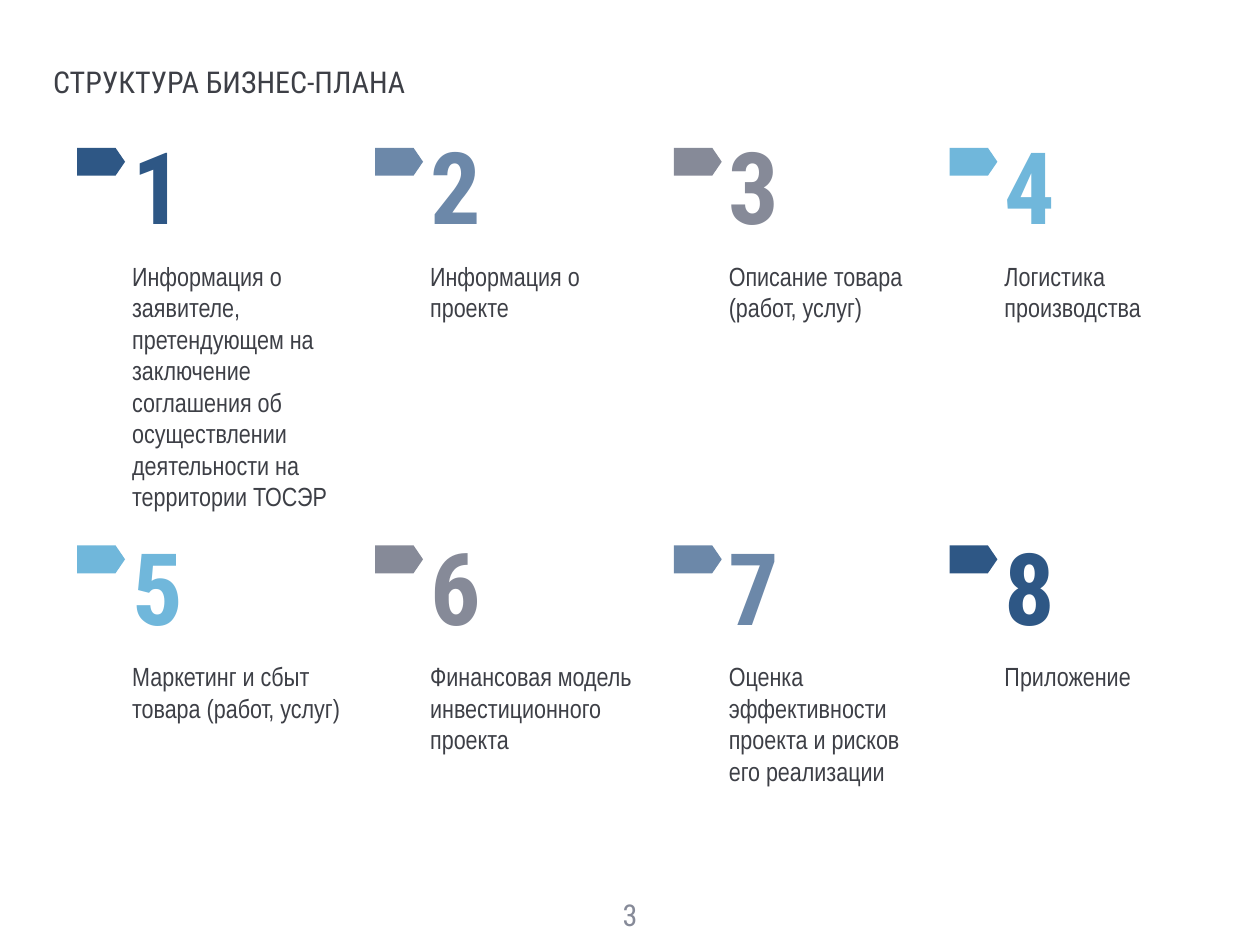
from dataclasses import dataclass

from pptx import Presentation
from pptx.dml.color import RGBColor
from pptx.enum.shapes import MSO_SHAPE
from pptx.enum.text import MSO_ANCHOR, PP_ALIGN
from pptx.util import Cm, Pt

TAG = MSO_SHAPE.FLOWCHART_OFFPAGE_CONNECTOR
TOP, MIDDLE = MSO_ANCHOR.TOP, MSO_ANCHOR.MIDDLE
LEFT, CENTER = PP_ALIGN.LEFT, PP_ALIGN.CENTER


@dataclass(frozen=True)
class Theme:
    ink: str = "3D3F46"
    navy: str = "2E5785"
    steel: str = "6C88A9"
    gray: str = "868A98"
    sky: str = "70B7DB"
    head: str = "Roboto Condensed"
    body: str = "Arial Narrow"
    title: int = 24
    digit: int = 80
    label: int = 21


@dataclass(frozen=True)
class Style:
    font: str
    size: int
    color: str
    bold: bool = False
    align: PP_ALIGN = LEFT
    anchor: MSO_ANCHOR = TOP
    wrap: bool = True


@dataclass(frozen=True)
class Row:
    digit: float
    label: float
    tag: float


@dataclass(frozen=True)
class Item:
    label: str
    color: str
    lines: int
    width: float = 6.22


THEME = Theme()
COLS = (3.73, 12.14, 20.57, 28.35)
ROWS = (Row(3.51, 7.34, 3.89), Row(14.83, 18.64, 15.11))
LINE = 0.89
ITEMS = (
    Item("Информация о заявителе, претендующем на заключение соглашения "
         "об осуществлении деятельности на территории ТОСЭР", THEME.navy, 8),
    Item("Информация о проекте", THEME.steel, 2),
    Item("Описание товара (работ, услуг)", THEME.gray, 2),
    Item("Логистика производства", THEME.sky, 2, 6.02),
    Item("Маркетинг и сбыт товара (работ, услуг)", THEME.sky, 2, 6.02),
    Item("Финансовая модель инвестиционного проекта", THEME.gray, 3),
    Item("Оценка эффективности проекта и рисков его реализации",
         THEME.steel, 4, 5.59),
    Item("Приложение", THEME.navy, 1),
)


def add_text(slide, text: str, x: float, y: float, w: float, h: float,
             style: Style) -> None:
    frame = slide.shapes.add_textbox(Cm(x), Cm(y), Cm(w), Cm(h)).text_frame
    frame.margin_left = frame.margin_right = Cm(0)
    frame.margin_top = frame.margin_bottom = Cm(0)
    frame.word_wrap = style.wrap
    frame.vertical_anchor = style.anchor
    para = frame.paragraphs[0]
    para.alignment = style.align
    run = para.add_run()
    run.text = text
    run.font.name = style.font
    run.font.size = Pt(style.size)
    run.font.bold = style.bold
    run.font.color.rgb = RGBColor.from_string(style.color)


def add_tag(slide, x: float, y: float, color: str) -> None:
    tag = slide.shapes.add_shape(TAG, Cm(x), Cm(y), Cm(0.79), Cm(1.35))
    tag.rotation = 270
    tag.shadow.inherit = False
    tag.fill.solid()
    tag.fill.fore_color.rgb = RGBColor.from_string(color)
    tag.line.fill.background()


def add_item(slide, index: int, item: Item) -> None:
    row, x = ROWS[index // len(COLS)], COLS[index % len(COLS)]
    digit = Style(THEME.head, THEME.digit, item.color, True, CENTER, wrap=False)
    label = Style(THEME.body, THEME.label, THEME.ink)
    add_tag(slide, x - 1.27, row.tag, item.color)
    add_text(slide, str(index + 1), x, row.digit, 1.3, 3.43, digit)
    add_text(slide, item.label, x, row.label, item.width, item.lines * LINE, label)


def main() -> None:
    deck = Presentation()
    deck.slide_width, deck.slide_height = Cm(35.56), Cm(26.67)
    slide = deck.slides.add_slide(deck.slide_layouts[6])
    add_text(slide, "СТРУКТУРА БИЗНЕС-ПЛАНА", 1.5, 1.78, 32.7, 1.02,
             Style(THEME.head, THEME.title, THEME.ink))
    for index, item in enumerate(ITEMS):
        add_item(slide, index, item)
    add_text(slide, "3", 17.08, 25.12, 1.4, 1.4,
             Style(THEME.head, THEME.title, THEME.gray, align=CENTER, anchor=MIDDLE))
    deck.save("out.pptx")


if __name__ == "__main__":
    main()
